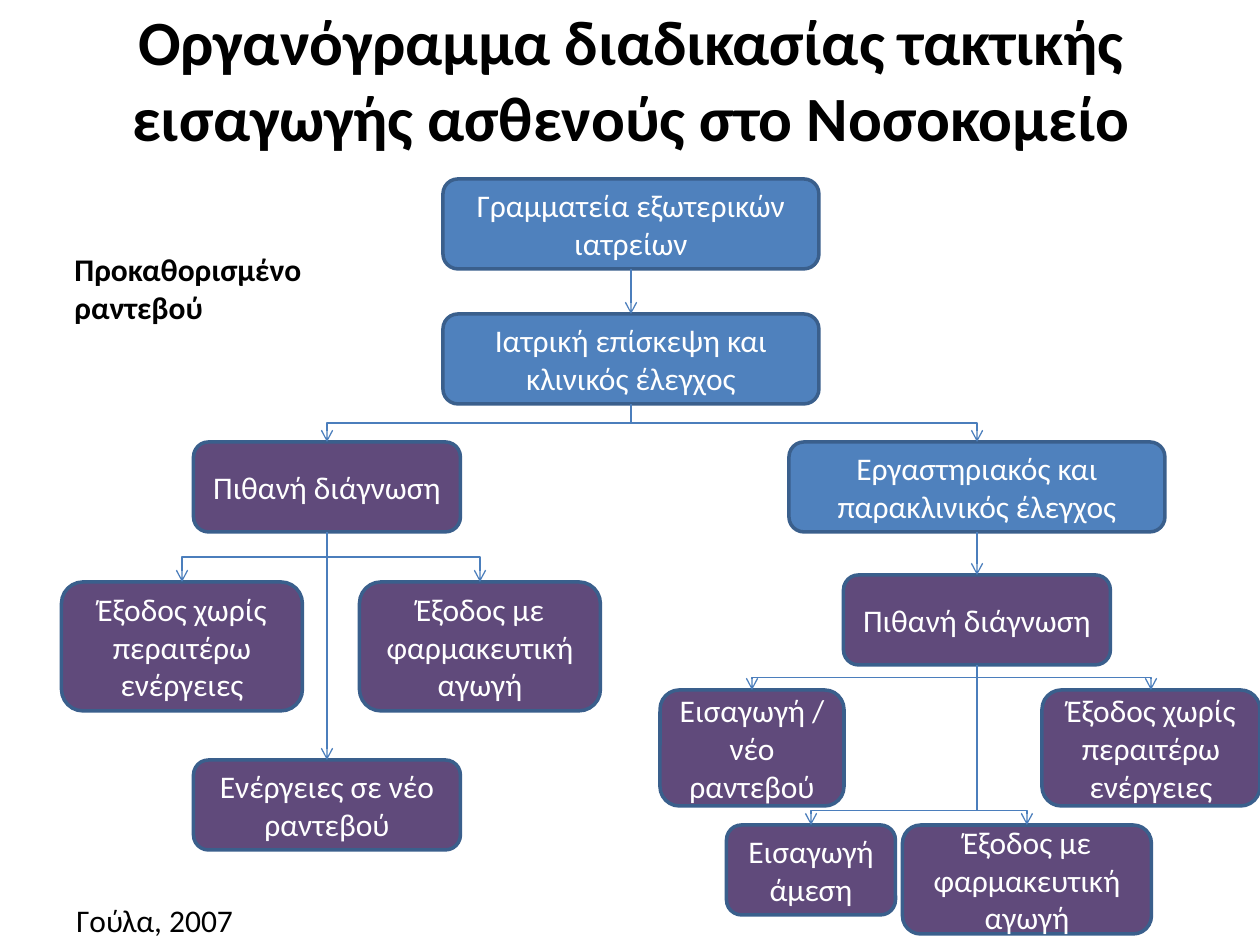
from lxml import etree
from pptx import Presentation
from pptx.dml.color import RGBColor
from pptx.enum.shapes import MSO_CONNECTOR as Link, MSO_SHAPE as Shape
from pptx.enum.text import MSO_ANCHOR as Anchor, MSO_AUTO_SIZE as AutoSize, PP_ALIGN as Align
from pptx.oxml.ns import qn
from pptx.util import Pt

EMU_PER_PX = 914400 / 126
BLUE, PURPLE, BORDER, LINK = "4F81BD", "604A7B", "3A5F8C", "4B7EBC"
TOP, BOTTOM = 0, 2  # connection sites of a rounded rectangle


def px(*lengths):
    return [round(length * EMU_PER_PX) for length in lengths]


def write(shape, text, size, color, bold, align, **frame_format):
    frame = shape.text_frame
    for name, value in frame_format.items():
        setattr(frame, name, value)
    para = frame.paragraphs[0]
    para.alignment = align
    span = para.add_run()
    span.text = text
    font_format = {"name": "Calibri", "size": Pt(size), "bold": bold}
    for name, value in font_format.items():
        setattr(span.font, name, value)
    span.font.color.rgb = RGBColor.from_string(color)


deck = Presentation()
deck.slide_width, deck.slide_height = px(1260, 945)
page = deck.slides.add_slide(deck.slide_layouts[6])

# Free text: place, text, size, bold, alignment, frame format
labels = [
    ((64, 16, 1134, 125), "Οργανόγραμμα διαδικασίας τακτικής εισαγωγής ασθενούς στο Νοσοκομείο",
     36, True, Align.CENTER, {"word_wrap": True, "vertical_anchor": Anchor.MIDDLE}),
    ((62, 244, 297, 90), "Προκαθορισμένο ραντεβού", 18, True, Align.LEFT,
     {"word_wrap": True, "auto_size": AutoSize.SHAPE_TO_FIT_TEXT}),
    ((64, 895, 184, 50), "Γούλα, 2007", 18, False, Align.LEFT,
     {"word_wrap": False, "auto_size": AutoSize.SHAPE_TO_FIT_TEXT}),
]
for place, text, size, bold, align, frame_format in labels:
    box = page.shapes.add_textbox(*px(*place))
    write(box, text, size, "000000", bold, align, **frame_format)

# Steps: centre x, top, width, height, fill, text
steps = {
    "secretariat": (631, 179, 376, 90, BLUE, "Γραμματεία εξωτερικών ιατρείων"),
    "visit": (631, 314, 376, 90, BLUE, "Ιατρική επίσκεψη και κλινικός έλεγχος"),
    "lab": (977, 442, 376, 90, BLUE, "Εργαστηριακός και παρακλινικός έλεγχος"),
    "diagnosis": (327, 442, 267, 90, PURPLE, "Πιθανή διάγνωση"),
    "exit": (182, 582, 241, 129, PURPLE, "Έξοδος χωρίς περαιτέρω ενέργειες"),
    "medication": (480, 582, 241, 129, PURPLE, "Έξοδος με φαρμακευτική αγωγή"),
    "new visit": (327, 760, 267, 90, PURPLE, "Ενέργειες σε νέο ραντεβού"),
    "lab diagnosis": (977, 575, 267, 90, PURPLE, "Πιθανή διάγνωση"),
    "lab exit": (1151, 690, 218, 116, PURPLE, "Έξοδος χωρίς περαιτέρω ενέργειες"),
    "lab medication": (1027, 825, 249, 109, PURPLE, "Έξοδος με φαρμακευτική αγωγή"),
    "admission": (811, 825, 169, 90, PURPLE, "Εισαγωγή άμεση"),
    "lab new visit": (752, 690, 184, 116, PURPLE, "Εισαγωγή / νέο ραντεβού"),
}
boxes = {}
for step, (center, top, width, height, fill, text) in steps.items():
    box = page.shapes.add_shape(Shape.ROUNDED_RECTANGLE,
                                *px(center - width / 2, top, width, height))
    box.shadow.inherit = False
    box.fill.solid()
    box.fill.fore_color.rgb = RGBColor.from_string(fill)
    box.line.color.rgb = RGBColor.from_string(BORDER)
    box.line.width = Pt(2)
    write(box, text, 18, "FFFFFF", False, Align.CENTER,
          word_wrap=True, vertical_anchor=Anchor.MIDDLE)
    boxes[step] = box

# Links: parent, child, share of the drop at which the elbow turns
links = [
    ("secretariat", "visit", 0.5),
    ("visit", "diagnosis", 0.5),
    ("visit", "lab", 0.5),
    ("diagnosis", "exit", 0.5),
    ("diagnosis", "medication", 0.5),
    ("diagnosis", "new visit", 0.5),
    ("lab", "lab diagnosis", 0.5),
    ("lab diagnosis", "lab new visit", 0.5),
    ("lab diagnosis", "lab exit", 0.5),
    ("lab diagnosis", "admission", 0.91),
    ("lab diagnosis", "lab medication", 0.91),
]
for parent, child, turn in links:
    x1, y1 = steps[parent][0], steps[parent][1] + steps[parent][3]
    x2, y2 = steps[child][:2]
    kind = Link.STRAIGHT if x1 == x2 else Link.ELBOW
    link = page.shapes.add_connector(kind, *px(x1, y1, x2, y2))
    link.begin_connect(boxes[parent], BOTTOM)
    link.end_connect(boxes[child], TOP)
    properties = link._element.spPr

    if kind == Link.ELBOW:
        # A quarter turn makes the elbow leave downwards
        drop, reach = y2 - y1, abs(x2 - x1)
        link.left, link.top, link.width, link.height = px(
            (x1 + x2 - drop) / 2, (y1 + y2 - reach) / 2, drop, reach)
        rightward = x2 > x1
        turned = {"rot": "16200000" if rightward else "5400000",
                  "flipH": "1" if rightward else "0", "flipV": "0"}
        for name, value in turned.items():
            properties.find(qn("a:xfrm")).set(name, value)
        guides = properties.find(qn("a:prstGeom")).get_or_add_avLst()
        etree.SubElement(guides, qn("a:gd"), name="adj1", fmla=f"val {round(turn * 100000)}")

    link.line.color.rgb = RGBColor.from_string(LINK)
    link.line.width = Pt(0.75)
    etree.SubElement(properties.find(qn("a:ln")), qn("a:tailEnd"), type="arrow")
    etree.SubElement(properties, qn("a:effectLst"))

deck.save("out.pptx")
